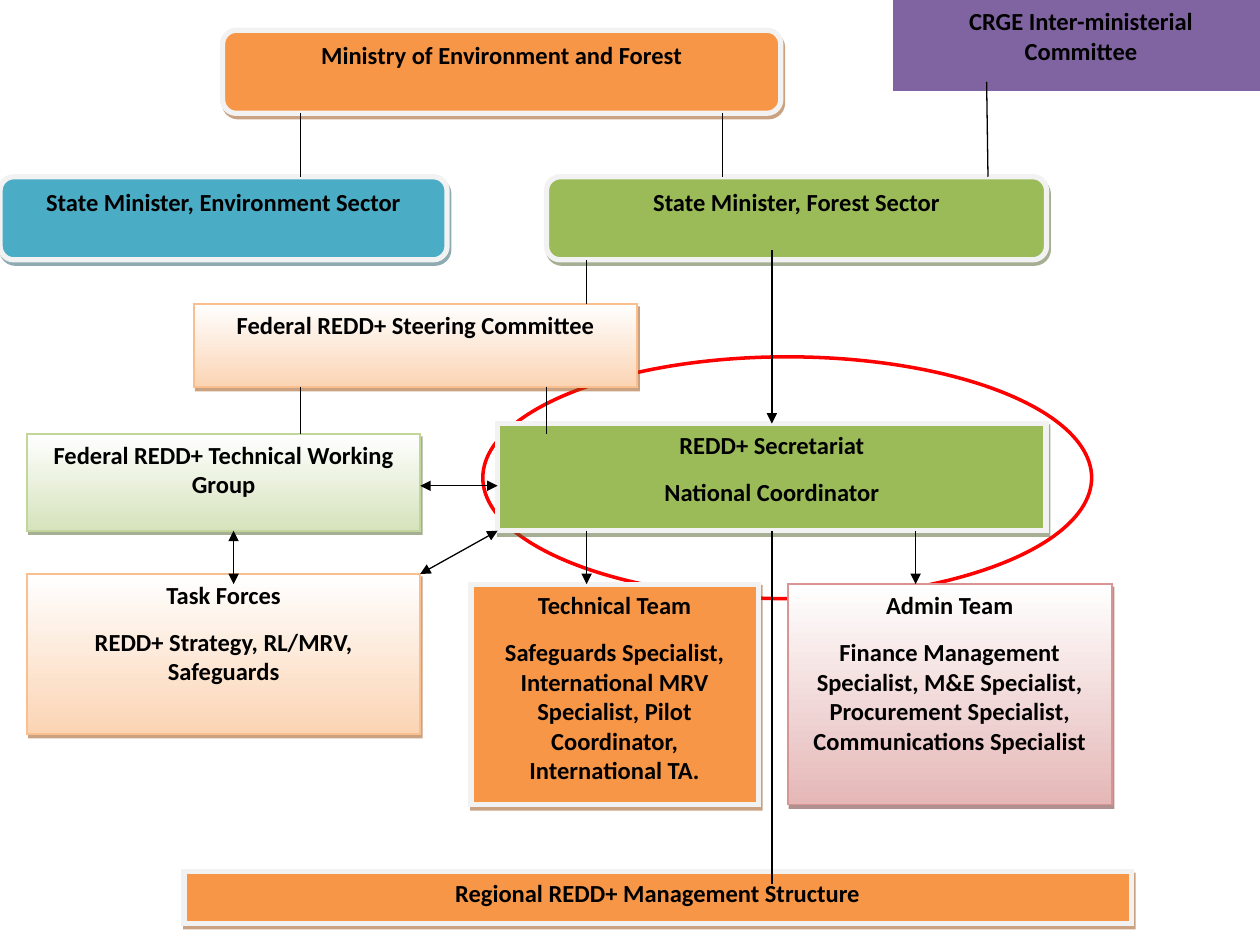
"""Build the REDD+ institutional structure chart."""
from dataclasses import dataclass
from typing import Optional

from lxml import etree
from pptx import Presentation, util as u
from pptx.dml.color import RGBColor
from pptx.enum import shapes, text
from pptx.oxml import ns

BLACK = RGBColor(0x00, 0x00, 0x00)
WHITE = RGBColor(0xFF, 0xFF, 0xFF)
RED = RGBColor(0xFF, 0x00, 0x00)
FRAME = RGBColor(0xF2, 0xF2, 0xF2)
ORANGE = RGBColor(0xF7, 0x96, 0x46)
GREEN = RGBColor(0x9B, 0xBB, 0x59)
TEAL = RGBColor(0x4B, 0xAC, 0xC6)
PURPLE = RGBColor(0x80, 0x64, 0xA2)
PEACH = RGBColor(0xFB, 0xD4, 0xB4)
PEACH_EDGE = RGBColor(0xFA, 0xBF, 0x8F)
MINT = RGBColor(0xD6, 0xE3, 0xBC)
MINT_EDGE = RGBColor(0xC2, 0xD6, 0x9B)
ROSE = RGBColor(0xE5, 0xB8, 0xB7)
ROSE_EDGE = RGBColor(0xD9, 0x95, 0x94)
BROWN = RGBColor(0x97, 0x47, 0x06)
OLIVE = RGBColor(0x4E, 0x61, 0x28)
DEEP_TEAL = RGBColor(0x20, 0x58, 0x67)
MAROON = RGBColor(0x62, 0x24, 0x23)

RECT = shapes.MSO_SHAPE.RECTANGLE
ROUND = shapes.MSO_SHAPE.ROUNDED_RECTANGLE
OVAL = shapes.MSO_SHAPE.OVAL
FONT = {"name": "Calibri", "size": u.Pt(14), "bold": True}
PARAGRAPH = {"alignment": text.PP_ALIGN.CENTER, "space_after": u.Pt(10)}
FRAME_FORMAT = {"word_wrap": True, "vertical_anchor": text.MSO_ANCHOR.TOP}


@dataclass(frozen=True)
class Style:
    """Fill, outline and shadow of a box."""
    fill: RGBColor
    edge: RGBColor = FRAME
    width: float = 3
    shadow: Optional[RGBColor] = None
    gradient: bool = False


@dataclass(frozen=True)
class Box:
    """A box with its key, its place in points and its paragraphs."""
    key: str
    at: tuple[float, float, float, float]
    style: Style
    lines: tuple[str, ...] = ()
    kind: shapes.MSO_SHAPE = RECT


@dataclass(frozen=True)
class Link:
    """A straight line in points, with arrowheads and joined box sides."""
    start: tuple[float, float]
    end: tuple[float, float]
    heads: tuple[str, ...] = ()
    begin: Optional[tuple[str, int]] = None
    finish: Optional[tuple[str, int]] = None


SOLID_ORANGE = Style(ORANGE, shadow=BROWN)
SOLID_GREEN = Style(GREEN, shadow=OLIVE)
SOFT_PEACH = Style(PEACH, PEACH_EDGE, 1, BROWN, True)
END = ("tailEnd",)
BOTH = ("headEnd", "tailEnd")

BOXES = (
    Box("focus", (275.9, 203.9, 347.9, 138.2), Style(WHITE, RED, 2), kind=OVAL),
    Box("ministry", (127.2, 17.3, 319, 47.5), SOLID_ORANGE,
        ("Ministry of Environment and Forest",), ROUND),
    Box("forest", (312.3, 101, 285.8, 47.5), SOLID_GREEN,
        ("State Minister, Forest Sector",), ROUND),
    Box("environment", (0, 101, 255.5, 47.5), Style(TEAL, shadow=DEEP_TEAL),
        ("State Minister, Environment Sector",), ROUND),
    Box("secretariat", (284.4, 242.1, 313.4, 61.2), SOLID_GREEN,
        ("REDD+ Secretariat", "National Coordinator")),
    Box("steering", (110.8, 173.7, 253.4, 47.5), SOFT_PEACH,
        ("Federal REDD+ Steering Committee",)),
    Box("working", (15.5, 247.9, 224.6, 55.4), Style(MINT, MINT_EDGE, 1, OLIVE, True),
        ("Federal REDD+ Technical Working Group",)),
    Box("tasks", (15.5, 328, 224.6, 91.5), SOFT_PEACH,
        ("Task Forces", "REDD+ Strategy, RL/MRV, Safeguards")),
    Box("technical", (269.1, 333.8, 164.2, 126), SOLID_ORANGE,
        ("Technical Team", "Safeguards Specialist, International MRV Specialist, "
         "Pilot Coordinator, International TA.")),
    Box("admin", (450.1, 333.8, 185.2, 126), Style(ROSE, ROSE_EDGE, 1, MAROON, True),
        ("Admin Team", "Finance Management Specialist, M&E Specialist, "
         "Procurement Specialist, Communications Specialist")),
    Box("committee", (515.5, 0, 204.5, 46.8), Style(PURPLE, PURPLE, 10),
        ("CRGE Inter-ministerial Committee",)),
    Box("regional", (105.1, 498.2, 541.4, 29.5), SOLID_ORANGE,
        ("Regional REDD+ Management Structure",)),
)

LINKS = (
    Link((412.9, 64.8), (412.9, 101)),
    Link((171.8, 64.8), (171.8, 101)),
    Link((563.8, 46.8), (564.6, 101)),
    Link((335.2, 148.5), (335.2, 173.7)),
    Link((171.8, 221.2), (171.8, 247.9)),
    Link((312.3, 221.2), (312.3, 247.9)),
    Link((441.1, 143), (441.1, 242.1), END, finish=("secretariat", 0)),
    Link((441.1, 303.3), (441.1, 505.4), begin=("secretariat", 2)),
    Link((335.2, 303.3), (335.2, 333.8), END),
    Link((523.2, 303.3), (523.2, 333.8), END),
    Link((133.5, 333.8), (133.5, 303.3), BOTH),
    Link((240.1, 277.6), (284.4, 277.6), BOTH),
    Link((284.4, 303.3), (240.1, 328), BOTH),
)


def apply(target: object, values: dict) -> None:
    """Set each named attribute on the target."""
    for name, value in values.items():
        setattr(target, name, value)


def add_shadow(sp, color: RGBColor) -> None:
    """Give a shape a hard half-transparent shadow."""
    effects = sp._element.spPr.find(ns.qn("a:effectLst"))
    outer = etree.SubElement(effects, ns.qn("a:outerShdw"), dist=str(u.Pt(2.2)),
                             dir="3780000", algn="ctr", rotWithShape="0")
    tint = etree.SubElement(outer, ns.qn("a:srgbClr"), val=str(color))
    etree.SubElement(tint, ns.qn("a:alpha"), val="50000")


def draw_box(s, box: Box):
    """Draw a box with its text and return the shape."""
    sp = s.shapes.add_shape(box.kind, *map(u.Pt, box.at))
    sp.shadow.inherit = False
    style = box.style
    if style.gradient:
        sp.fill.gradient()
        sp.fill.gradient_angle = 270
        for stop, color in zip(sp.fill.gradient_stops, (WHITE, style.fill)):
            stop.color.rgb = color
    else:
        sp.fill.solid()
        sp.fill.fore_color.rgb = style.fill
    sp.line.color.rgb = style.edge
    sp.line.width = u.Pt(style.width)
    if box.kind == RECT:
        etree.SubElement(sp.line._get_or_add_ln(), ns.qn("a:miter"), lim="800000")
    if style.shadow is not None:
        add_shadow(sp, style.shadow)
    tf = sp.text_frame
    apply(tf, FRAME_FORMAT)
    for i, line in enumerate(box.lines):
        p = tf.add_paragraph() if i else tf.paragraphs[0]
        apply(p, PARAGRAPH)
        r = p.add_run()
        r.text = line
        apply(r.font, FONT)
        r.font.color.rgb = BLACK
    return sp


def draw_link(s, link: Link, boxes: dict) -> None:
    """Draw a line and join it to the boxes it names."""
    cx = s.shapes.add_connector(shapes.MSO_CONNECTOR.STRAIGHT,
                                *map(u.Pt, link.start + link.end))
    cx.line.color.rgb = BLACK
    cx.line.width = u.Pt(0.75)
    for head in link.heads:
        etree.SubElement(cx.line._get_or_add_ln(), ns.qn(f"a:{head}"), type="triangle")
    etree.SubElement(cx._element.spPr, ns.qn("a:effectLst"))
    for join, side in ((cx.begin_connect, link.begin), (cx.end_connect, link.finish)):
        if side:
            join(boxes[side[0]], side[1])


def main() -> None:
    """Build and save the slide."""
    prs = Presentation()
    prs.slide_width, prs.slide_height = u.Pt(720), u.Pt(540)
    s = prs.slides.add_slide(prs.slide_layouts[6])
    boxes = {box.key: draw_box(s, box) for box in BOXES}
    for link in LINKS:
        draw_link(s, link, boxes)
    prs.save("out.pptx")


if __name__ == "__main__":
    main()
